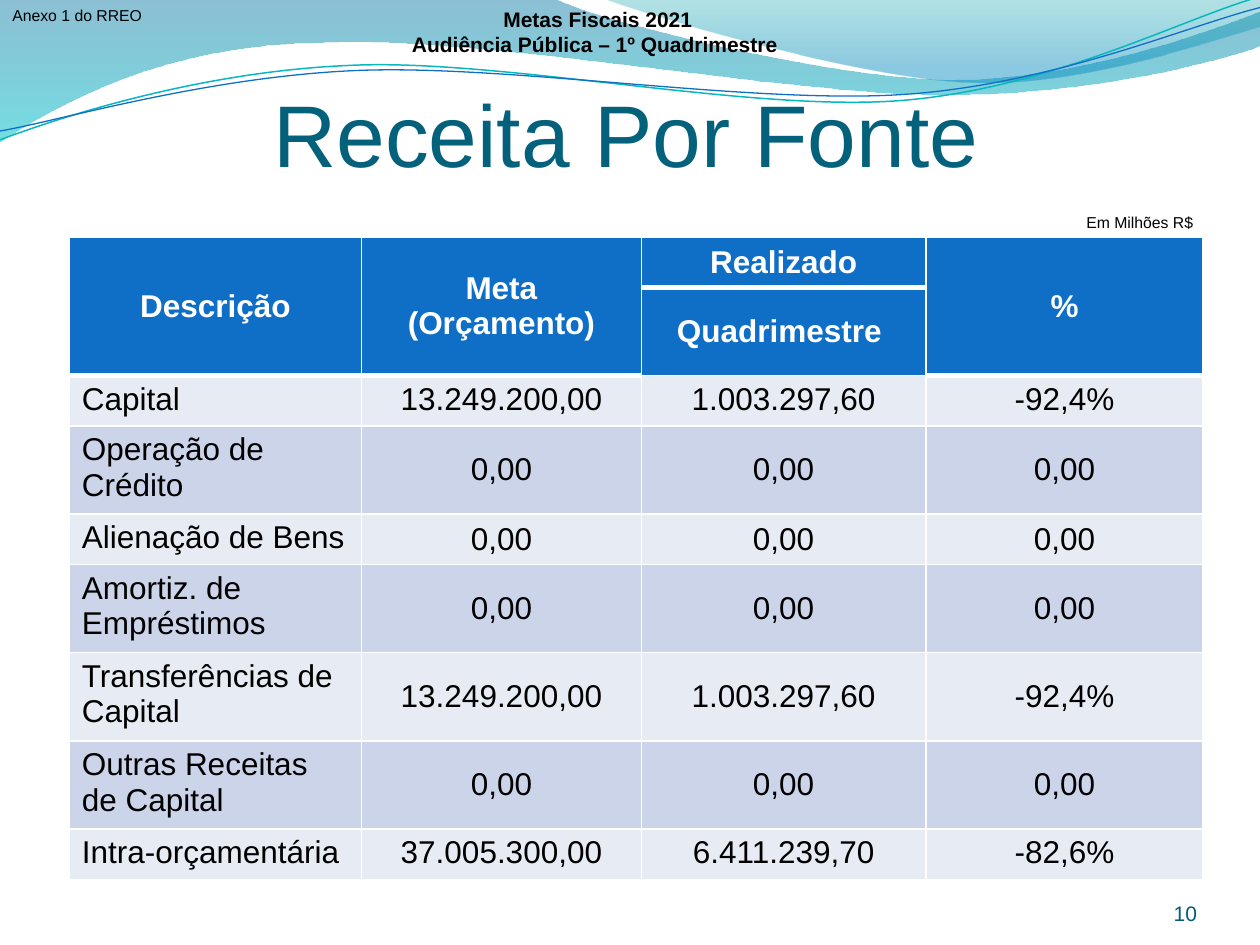
from lxml import etree
from pptx import Presentation
from pptx import util as u
from pptx.dml.color import RGBColor
from pptx.enum import text as t
from pptx.oxml.ns import qn

HUE = {"blue": "0F6FC6", "teal": "09B7BF", "title": "04617B", "page": "035C75",
       "light": "E7EBF4", "dark": "CCD4EA", "white": "FFFFFF", "black": "000000"}
MID, TOP, END = t.MSO_ANCHOR.MIDDLE, t.MSO_ANCHOR.TOP, t.MSO_ANCHOR.BOTTOM
LEFT, MEAN, RIGHT = t.PP_ALIGN.LEFT, t.PP_ALIGN.CENTER, t.PP_ALIGN.RIGHT

deck = Presentation()
deck.slide_width, deck.slide_height = u.Inches(10), u.Inches(7.5)
page = deck.slides.add_slide(deck.slide_layouts[5])
forms = page.shapes


def style(frame, size, hue, align, anchor, bold=False):
    frame.vertical_anchor = anchor
    for para in frame.paragraphs:
        para.alignment = align
        for run in para.runs:
            run.font.size, run.font.bold, run.font.name = u.Pt(size), bold, "Arial"
            run.font.color.rgb = RGBColor.from_string(HUE[hue])


def wave(start, legs, close=False):
    """Outline of legs: two numbers make a straight edge, six a cubic curve."""
    build = forms.build_freeform(*map(u.Inches, start))
    ends = [tuple(map(u.Inches, leg[-2:])) for leg in legs]
    build.add_line_segments(ends, close=close)
    form = build.convert_to_shape()
    form.shadow.inherit = False
    edges = list(form._element.spPr.iter(qn("a:lnTo")))
    for edge, leg in zip(edges, legs):
        if len(leg) == 6:
            edge.tag = qn("a:cubicBezTo")
            for n in (0, 1):
                x, y = map(u.Inches, leg[2 * n:2 * n + 2])
                dot = etree.Element(qn("a:pt"), x=str(x - form.left), y=str(y - form.top))
                edge.insert(n, dot)
    return form


# Gradient waves along the top edge
bands = [
    (wave((0, 0), [(4.4, -0.01),
                   (4.76, 0.17, 6.64, 0.63, 7.58, 0.63),
                   (8.53, 0.63, 9.58, 0.26, 10, 0.09),
                   (10.01, 0.36),
                   (9.83, 0.44, 8.7, 0.76, 7.46, 0.75),
                   (6.22, 0.75, 3.82, 0.28, 2.57, 0.34),
                   (1.29, 0.35, 0.46, 0.83, -0.01, 1.13)], True),
     270, [(0, "0074A0", 45), (1, "00C4CD", 55)]),
    (wave((4.79, -0.01), [(5.09, 0.11, 6.82, 0.62, 7.69, 0.65),
                          (8.56, 0.69, 9.61, 0.32, 10, 0.21),
                          (10, 0)], True),
     90, [(0.2, "008ABF", 45), (1, "00A0A8", 30)]),
]
for band, angle, stops in bands:
    band.line.fill.background()
    band.fill.gradient()
    band.fill.gradient_angle = angle
    for stop, (place, hue, alpha) in zip(band.fill.gradient_stops, stops):
        stop.position = place
        stop.color.rgb = RGBColor.from_string(hue)
    tints = band._element.spPr.iter(qn("a:srgbClr"))
    for tint, (_, _, alpha) in zip(tints, stops):
        etree.SubElement(tint, qn("a:alpha")).set("val", str(alpha * 1000))

# Thin curved lines
for start, legs, hue, width in [
    ((0, 1.11), [(0.48, 0.93, 1.58, 0.57, 2.77, 0.52),
                 (3.95, 0.46, 5.93, 0.89, 7.13, 0.8),
                 (8.33, 0.71, 9.38, 0.15, 9.98, -0.02)], "teal", 0.85),
    ((0, 1.04), [(0.47, 0.96, 1.64, 0.61, 2.83, 0.56),
                 (4.03, 0.51, 5.97, 0.83, 7.17, 0.75),
                 (8.36, 0.67, 9.41, 0.21, 10, 0.06)], "blue", 0.75),
]:
    curl = wave(start, legs)
    curl.fill.background()
    curl.line.color.rgb = RGBColor.from_string(HUE[hue])
    curl.line.width = u.Pt(width)

# Title, placed above the waves
title = forms.title
forms._spTree.append(title._element)
title.left, title.top, title.width, title.height = map(u.Inches, (0.47, 0.55, 9, 1.12))
frame = title.text_frame
frame.text = "Receita Por Fonte"
frame.auto_size = t.MSO_AUTO_SIZE.NONE
frame.margin_left = frame.margin_right = 0
frame.margin_top, frame.margin_bottom = u.Inches(0.05), u.Inches(0.16)
style(frame, 50, "title", MEAN, MID)

# Revenue table
ZERO = ["0,00"] * 3
FUND = ["13.249.200,00", "1.003.297,60", "-92,4%"]
data = [
    ["Descrição", "Meta (Orçamento)", "Realizado", "%"],
    ["", "", "Quadrimestre ", ""],
    ["Capital", *FUND],
    ["Operação de Crédito", *ZERO],
    ["Alienação de Bens", *ZERO],
    ["Amortiz. de Empréstimos", *ZERO],
    ["Transferências de Capital", *FUND],
    ["Outras Receitas de Capital", *ZERO],
    ["Intra-orçamentária", "37.005.300,00", "6.411.239,70", "-82,6%"],
]
cols = [2.32, 2.22, 2.26, 2.2]
rows = [0.4 if r in (0, 2, 4, 8) else 0.7 for r in range(len(data))]
grid = forms.add_table(len(rows), len(cols), u.Inches(0.55), u.Inches(1.88),
                       u.Inches(sum(cols)), u.Inches(sum(rows))).table
for col, width in zip(grid.columns, cols):
    col.width = u.Inches(width)
for row, height in zip(grid.rows, rows):
    row.height = u.Inches(height)
for c in (0, 1, 3):
    grid.cell(0, c).merge(grid.cell(1, c))

for r, line in enumerate(data):
    for c, word in enumerate(line):
        cell = grid.cell(r, c)
        head = r < 2
        cell.text = word
        cell.fill.solid()
        fill = "blue" if head else ("dark" if r % 2 else "light")
        cell.fill.fore_color.rgb = RGBColor.from_string(HUE[fill])
        cell.vertical_anchor = MID if head or (c and r not in (2, 8)) else TOP
        style(cell.text_frame, 18, "white" if head else "black",
              MEAN if head or c else LEFT, None, head)
        # White borders, thick below the header cells
        for n, (side, edge) in enumerate(zip("LRTB", (0, 0, r, r + 1))):
            thick = edge == 1 or (edge == 2 and c != 2)
            rim = etree.Element(qn("a:ln" + side), w=str(u.Pt(3 if thick else 0.96)))
            paint = etree.SubElement(rim, qn("a:solidFill"))
            etree.SubElement(paint, qn("a:srgbClr"), val=HUE["white"])
            cell._tc.get_or_add_tcPr().insert(n, rim)

# Page number, unit, source and heading
for word, spot, size, hue, align, anchor, bold, pad in [
    ("10", (8.67, 6.95, 0.83, 0.4), 12, "page", RIGHT, END, False, 0),
    ("Em Milhões R$", (8.52, 1.64, 1.05, 0.25), 9, "black", MEAN, TOP, False, 1),
    ("Anexo 1 do RREO", (0, 0, 1.36, 0.25), 9, "black", LEFT, TOP, False, 1),
    ("Metas Fiscais 2021\nAudiência Pública – 1º Quadrimestre ",
     (3.05, 0, 3.39, 0.5), 12, "black", MEAN, MID, True, 1),
]:
    frame = forms.add_textbox(*map(u.Inches, spot)).text_frame
    frame.text = word
    frame.word_wrap = True
    frame.margin_left = frame.margin_right = u.Inches(0.1 * pad)
    frame.margin_top = frame.margin_bottom = u.Inches(0.05 * pad)
    style(frame, size, hue, align, anchor, bold)

deck.save("out.pptx")
